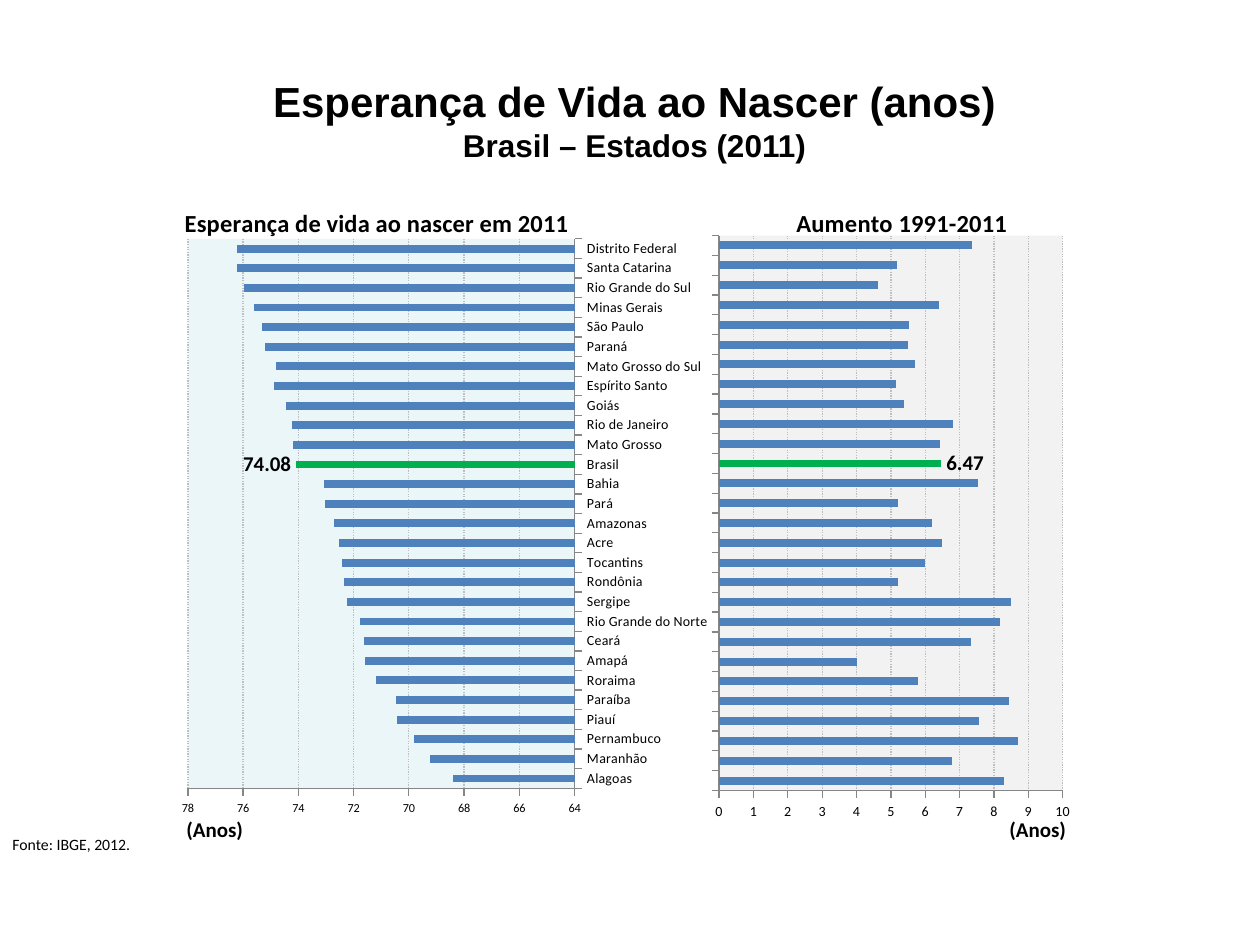
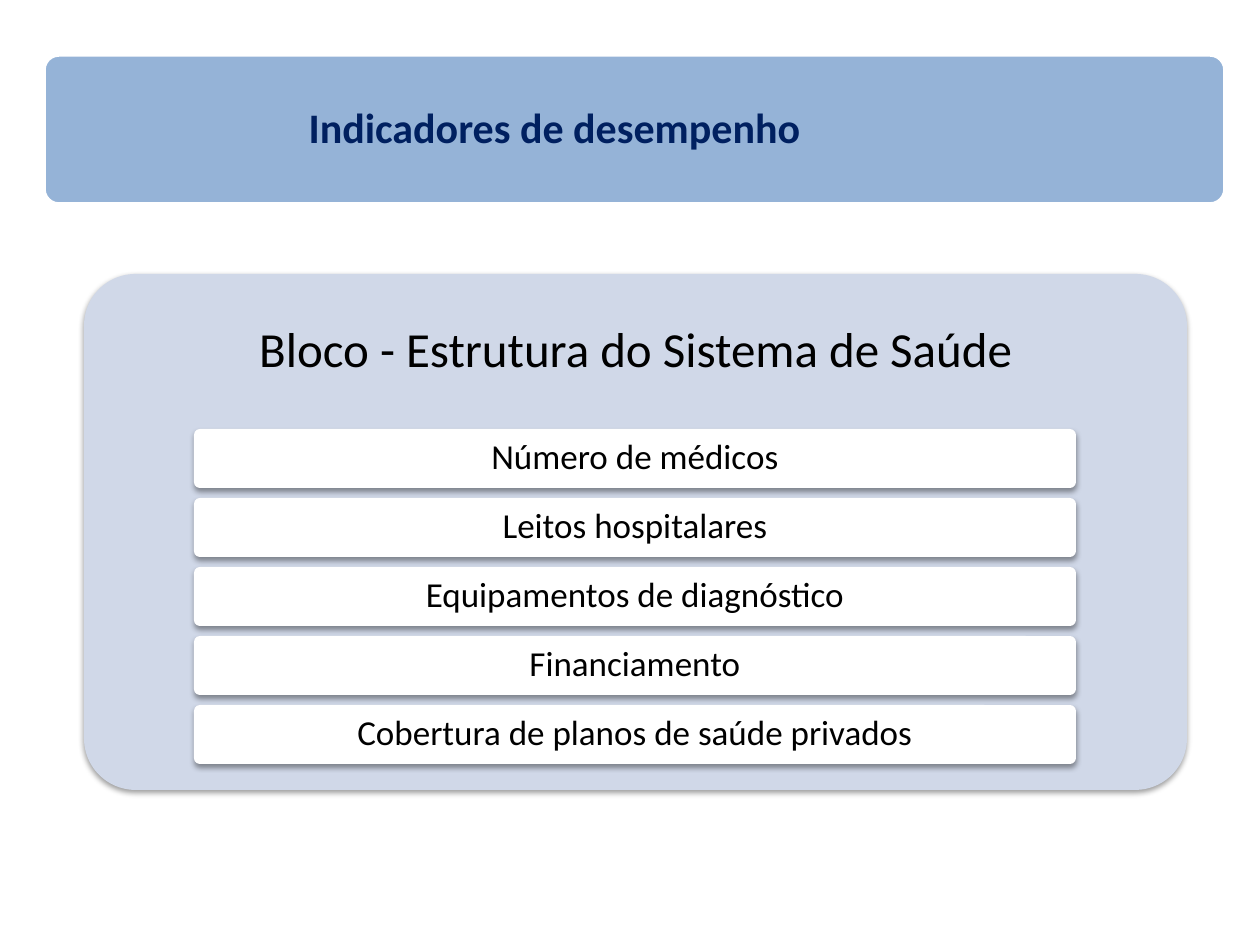
from lxml import etree
from pptx import Presentation
from pptx.chart.data import CategoryChartData
from pptx.dml.color import RGBColor
from pptx.enum.chart import XL_CHART_TYPE, XL_LABEL_POSITION, XL_TICK_LABEL_POSITION, XL_TICK_MARK
from pptx.enum.dml import MSO_LINE
from pptx.enum.shapes import MSO_SHAPE
from pptx.enum.text import MSO_ANCHOR, MSO_AUTO_SIZE, PP_ALIGN
from pptx.oxml.ns import qn
from pptx.util import Emu, Pt

BAR = XL_CHART_TYPE.BAR_CLUSTERED
LABEL_OUTSIDE = XL_LABEL_POSITION.OUTSIDE_END
NO_LABELS = XL_TICK_LABEL_POSITION.NONE
TICK_OUT, TICK_NONE = XL_TICK_MARK.OUTSIDE, XL_TICK_MARK.NONE
DOTTED = MSO_LINE.ROUND_DOT
ROUND_RECT = MSO_SHAPE.ROUNDED_RECTANGLE
TOP, MIDDLE = MSO_ANCHOR.TOP, MSO_ANCHOR.MIDDLE
LEFT, CENTER = PP_ALIGN.LEFT, PP_ALIGN.CENTER
NO_AUTOFIT = MSO_AUTO_SIZE.NONE

PX_PER_INCH = 126
TITLE_ONLY = 5
COLORS = {
    "text": "000000", "heading": "002060", "banner": "95B3D7", "panel": "D0D8E8",
    "white": "FFFFFF", "bar": "4F81BD", "brasil": "00B050", "grid": "BFBFBF",
    "axis": "868686", "expectancy_plot": "EBF6F9", "increase_plot": "F2F2F2",
}

# state, life expectancy in 2011, increase 1991-2011; from the bottom bar up
STATES = [
    ("Alagoas", 68.4, 8.28), ("Maranhão", 69.23, 6.78), ("Pernambuco", 69.81, 8.71),
    ("Piauí", 70.42, 7.57), ("Paraíba", 70.47, 8.44), ("Roraima", 71.18, 5.79),
    ("Amapá", 71.58, 4.01), ("Ceará", 71.62, 7.32), ("Rio Grande do Norte", 71.78, 8.17),
    ("Sergipe", 72.23, 8.5), ("Rondônia", 72.36, 5.2), ("Tocantins", 72.41, 5.98),
    ("Acre", 72.52, 6.49), ("Amazonas", 72.71, 6.21), ("Pará", 73.03, 5.21),
    ("Bahia", 73.08, 7.55), ("Brasil", 74.08, 6.47), ("Mato Grosso", 74.19, 6.44),
    ("Rio de Janeiro", 74.24, 6.81), ("Goiás", 74.43, 5.37), ("Espírito Santo", 74.89, 5.14),
    ("Mato Grosso do Sul", 74.82, 5.69), ("Paraná", 75.21, 5.51), ("São Paulo", 75.31, 5.53),
    ("Minas Gerais", 75.61, 6.4), ("Rio Grande do Sul", 75.96, 4.63),
    ("Santa Catarina", 76.21, 5.17), ("Distrito Federal", 76.23, 7.37),
]
INDICATORS = ["Número de médicos", "Leitos hospitalares", "Equipamentos de diagnóstico",
              "Financiamento", "Cobertura de planos de saúde privados"]


def px(length):
    return Emu(round(length * 914400 / PX_PER_INCH))


def rgb(name):
    return RGBColor.from_string(COLORS[name])


def style_font(font, size, color="text", bold=False, face="Calibri"):
    font.name, font.size, font.bold = face, Pt(size), bold
    font.color.rgb = rgb(color)


def write(shape, text, sizes, color="text", bold=False, face="Calibri",
          align=LEFT, anchor=TOP, spacing=None):
    """Fill a shape with lines of text, one size for each line."""
    frame = shape.text_frame
    frame.word_wrap, frame.auto_size = True, NO_AUTOFIT
    frame.vertical_anchor = anchor
    paragraph = frame.paragraphs[0]
    paragraph.alignment = align
    if spacing:
        paragraph.line_spacing = spacing
    for number, (line, size) in enumerate(zip(text.split("\n"), sizes)):
        if number:
            paragraph.add_line_break()
        run = paragraph.add_run()
        run.text = line
        style_font(run.font, size, color, bold, face)


def add_label(slide, box, text, size, **style):
    label = slide.shapes.add_textbox(*map(px, box))
    write(label, text, [size], **style)


def add_title(slide, box, text, sizes, **style):
    title = slide.shapes.title
    title.left, title.top, title.width, title.height = map(px, box)
    write(title, text, sizes, bold=True, anchor=MIDDLE, **style)
    return title


def add_card(slide, box, fill, shadow=True):
    card = slide.shapes.add_shape(ROUND_RECT, *map(px, box))
    card.adjustments[0] = 0.1
    card.fill.solid()
    card.fill.fore_color.rgb = rgb(fill)
    card.line.fill.background()
    card.shadow.inherit = False
    if shadow:
        effects = card._element.spPr.find(qn("a:effectLst"))
        outer = etree.SubElement(effects, qn("a:outerShdw"), blurRad="40000", dist="20000",
                                 dir="5400000", rotWithShape="0")
        black = etree.SubElement(outer, qn("a:srgbClr"), val=COLORS["text"])
        etree.SubElement(black, qn("a:alpha"), val="38000")
    return card


def set_layout(parent, **values):
    """Place a chart title or plot area by fractions of the chart."""
    layout = parent.find(qn("c:layout"))
    if layout is None:
        layout = etree.Element(qn("c:layout"))
        parent.insert(0, layout)
    manual = etree.SubElement(layout, qn("c:manualLayout"))
    for tag, value in values.items():
        etree.SubElement(manual, qn("c:" + tag), val=str(value))


def set_chart_title(chart, text, x, y):
    title = chart.chart_title
    run = title.text_frame.paragraphs[0].add_run()
    run.text = text
    style_font(run.font, 14, bold=True)
    set_layout(title._element, xMode="edge", yMode="edge", x=x, y=y)
    title._element.find(qn("c:overlay")).set("val", "1")


def set_plot_area(chart, fill, x, y, w, h):
    area = chart._chartSpace.chart.plotArea
    set_layout(area, layoutTarget="inner", xMode="edge", yMode="edge", x=x, y=y, w=w, h=h)
    properties = etree.SubElement(area, qn("c:spPr"))
    solid = etree.SubElement(properties, qn("a:solidFill"))
    etree.SubElement(solid, qn("a:srgbClr"), val=COLORS[fill])


def style_axes(chart, low, high, step, value_size):
    for axis in (chart.category_axis, chart.value_axis):
        axis.major_tick_mark, axis.minor_tick_mark = TICK_OUT, TICK_NONE
        axis.format.line.color.rgb = rgb("axis")
        axis.format.line.width = Pt(0.75)
        axis.tick_labels.number_format = "General"
        axis.tick_labels.number_format_is_linked = False
    style_font(chart.category_axis.tick_labels.font, 8)
    values = chart.value_axis
    style_font(values.tick_labels.font, value_size)
    values.minimum_scale, values.maximum_scale, values.major_unit = low, high, step
    values.has_major_gridlines = True
    grid = values.major_gridlines.format.line
    grid.color.rgb = rgb("grid")
    grid.width, grid.dash_style = Pt(0.75), DOTTED


def color_bars(chart, highlighted):
    """Colour the bars, with one bar highlighted and labelled."""
    plot = chart.plots[0]
    plot.gap_width, plot.vary_by_categories = 150, False
    series = plot.series[0]
    series.format.fill.solid()
    series.format.fill.fore_color.rgb = rgb("bar")
    series.data_labels.show_value = False
    point = series.points[highlighted]
    point.format.fill.solid()
    point.format.fill.fore_color.rgb = rgb("brasil")
    style_font(point.data_label.font, 12, bold=True)
    point.data_label.position = LABEL_OUTSIDE


def add_state_chart(slide, box, categories, values, title, plot, scale, value_size):
    data = CategoryChartData()
    data.categories = categories
    data.add_series("Series 1", values)
    chart = slide.shapes.add_chart(BAR, *map(px, box), data).chart
    chart.has_legend = False
    style_font(chart.font, 10)
    set_chart_title(chart, *title)
    set_plot_area(chart, *plot)
    style_axes(chart, *scale, value_size)
    color_bars(chart, [state[0] for state in STATES].index("Brasil"))
    return chart


def build_life_expectancy(slide):
    add_title(slide, (213, 55, 843, 129),
              "Esperança de Vida ao Nascer (anos)\nBrasil – Estados (2011)", (24, 18),
              face="Arial", align=CENTER)
    names, expectancy, increase = zip(*STATES)
    expectancy_chart = add_state_chart(
        slide, (164, 195, 544, 655), names, expectancy,
        ("Esperança de vida ao nascer em 2011", 0.03, 0.01),
        ("expectancy_plot", 0.044, 0.067, 0.713, 0.839), (64, 78, 2), 7)
    expectancy_chart.value_axis.reverse_order = True
    ranks = [str(rank) for rank in range(1, len(STATES) + 1)]
    increase_chart = add_state_chart(
        slide, (699, 195, 387, 635), ranks, increase,
        ("Aumento 1991-2011", 0.24, 0.01),
        ("increase_plot", 0.052, 0.064, 0.888, 0.874), (0, 10, 1), 8)
    increase_chart.category_axis.tick_label_position = NO_LABELS
    for left in (174, 997):
        add_label(slide, (left, 810, 116, 48), "(Anos)", 12, bold=True)
    add_label(slide, (0, 829, 195, 26), "Fonte: IBGE, 2012.", 9)


def build_indicators(slide):
    title = add_title(slide, (296, 55, 930, 149), "Indicadores de desempenho", [24],
                      color="heading", align=LEFT, spacing=0.9)
    banner = add_card(slide, (44, 55, 1181, 149), "banner", shadow=False)
    banner.line.color.rgb = rgb("white")
    banner.line.width = Pt(2)
    title._element.addprevious(banner._element)

    add_card(slide, (84, 274, 1103, 516), "panel")
    add_label(slide, (84, 274, 1103, 155), "Bloco - Estrutura do Sistema de Saúde", 28,
              align=CENTER, anchor=MIDDLE, spacing=0.9)
    for row, indicator in enumerate(INDICATORS):
        card = add_card(slide, (194, 429 + 69 * row, 882, 59), "white")
        write(card, indicator, [20], align=CENTER, anchor=MIDDLE, spacing=0.9)


def main():
    deck = Presentation()
    deck.slide_width, deck.slide_height = px(1260), px(945)
    for build in (build_life_expectancy, build_indicators):
        build(deck.slides.add_slide(deck.slide_layouts[TITLE_ONLY]))
    deck.save("out.pptx")


if __name__ == "__main__":
    main()
